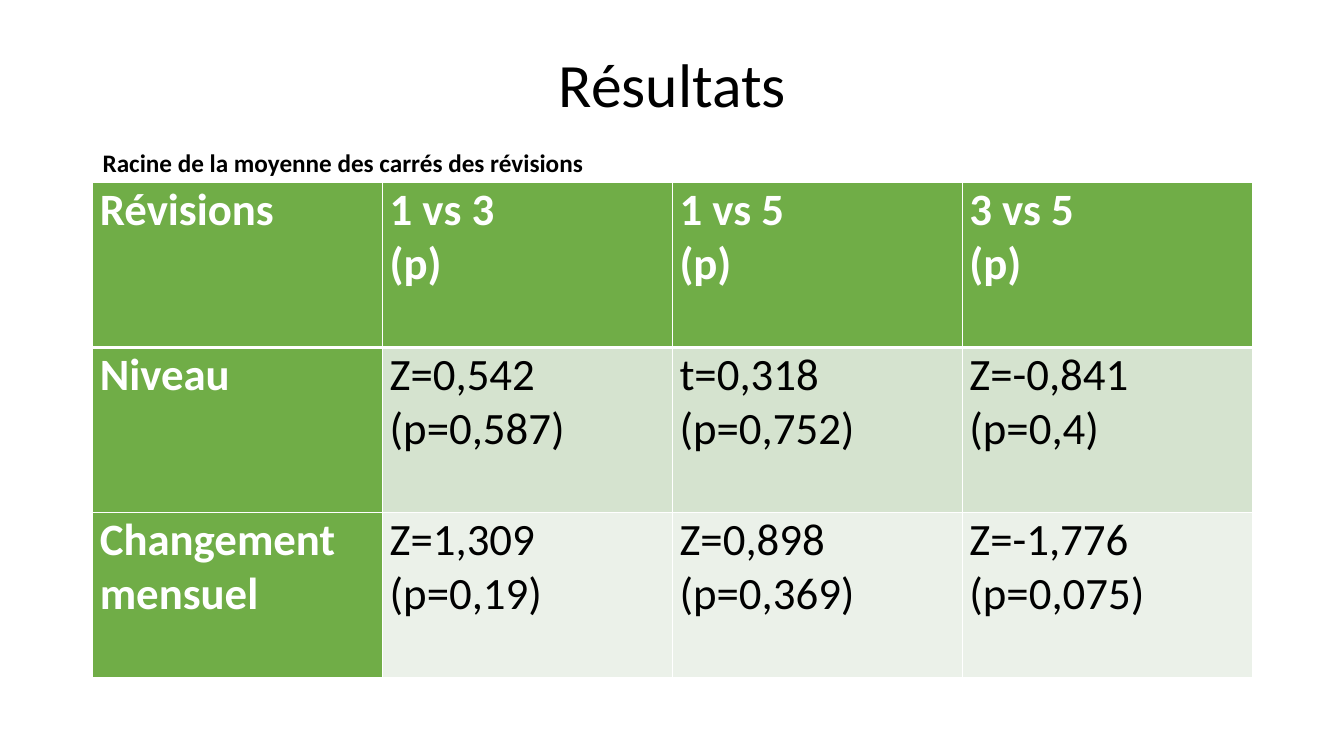
from dataclasses import dataclass

from lxml.etree import SubElement
from pptx import Presentation
from pptx.dml.color import RGBColor as RGB
from pptx.enum.text import MSO_ANCHOR as ANCHOR, PP_ALIGN as ALIGN
from pptx.oxml.ns import qn
from pptx.util import Inches, Pt


@dataclass(frozen=True)
class Theme:
    """Colours, font and type sizes of the slide."""
    font: str = "Calibri"
    ink: str = "000000"
    white: str = "FFFFFF"
    green: str = "70AD47"
    bands: tuple = ("D5E3CF", "EBF1E9")
    title: int = 44
    cell: int = 32
    caption: int = 18
    thin: int = 1
    thick: int = 3


T = Theme()

ROWS = (
    ("Révisions", "1 vs 3\n(p)", "1 vs 5\n(p)", "3 vs 5\n(p)"),
    ("Niveau", "Z=0,542\n(p=0,587)", "t=0,318\n(p=0,752)", "Z=-0,841\n(p=0,4)"),
    ("Changement mensuel", "Z=1,309\n(p=0,19)", "Z=0,898\n(p=0,369)", "Z=-1,776\n(p=0,075)"),
)


def write(tf, text, size, color, bold=False, align=ALIGN.LEFT):
    """Write each line of text as a paragraph with one run."""
    for i, line in enumerate(text.split("\n")):
        p = tf.add_paragraph() if i else tf.paragraphs[0]
        p.alignment = align
        r = p.add_run()
        r.text = line
        r.font.name, r.font.size, r.font.bold = T.font, Pt(size), bold
        r.font.color.rgb = RGB.from_string(color)


def add_title(s, x, y, w, h):
    """Place the centred slide title."""
    tf = s.shapes.add_textbox(Inches(x), Inches(y), Inches(w), Inches(h)).text_frame
    tf.word_wrap = True
    tf.vertical_anchor = ANCHOR.MIDDLE
    write(tf, "Résultats", T.title, T.ink, align=ALIGN.CENTER)
    tf.paragraphs[0].line_spacing = 0.9


def add_caption(s, x, y, w, h):
    """Place the bold caption above the table."""
    tf = s.shapes.add_textbox(Inches(x), Inches(y), Inches(w), Inches(h)).text_frame
    tf.word_wrap = False
    write(tf, "Racine de la moyenne des carrés des révisions", T.caption, T.ink, bold=True)


def set_borders(cell, top, bottom):
    """Draw white borders with the given top and bottom widths."""
    tc_pr = cell._tc.get_or_add_tcPr()
    for side, width in (("L", T.thin), ("R", T.thin), ("T", top), ("B", bottom)):
        ln = SubElement(tc_pr, qn(f"a:ln{side}"), w=str(Pt(width)))
        fill = SubElement(ln, qn("a:solidFill"))
        SubElement(fill, qn("a:srgbClr"), val=T.white)


def add_results(s, x, y, w, h):
    """Place the results table with a green header row and column."""
    table = s.shapes.add_table(len(ROWS), len(ROWS[0]), Inches(x), Inches(y),
                               Inches(w), Inches(h)).table
    for i, row in enumerate(ROWS):
        for j, text in enumerate(row):
            cell = table.cell(i, j)
            heading = i == 0 or j == 0
            cell.margin_left = cell.margin_right = Inches(0.07)
            cell.margin_top = cell.margin_bottom = 0
            set_borders(cell, T.thick if i == 1 else T.thin, T.thick if i == 0 else T.thin)
            cell.fill.solid()
            cell.fill.fore_color.rgb = RGB.from_string(T.green if heading else T.bands[i - 1])
            write(cell.text_frame, text, T.cell, T.white if heading else T.ink,
                  heading, ALIGN.JUSTIFY)


def main():
    """Build and save the slide."""
    prs = Presentation()
    prs.slide_width, prs.slide_height = Inches(13.33), Inches(7.5)
    s = prs.slides.add_slide(prs.slide_layouts[6])
    add_title(s, 0.92, 0.4, 11.5, 0.94)
    add_results(s, 0.92, 1.81, 11.5, 4.91)
    add_caption(s, 0.92, 1.41, 5, 0.4)
    prs.save("out.pptx")


if __name__ == "__main__":
    main()
